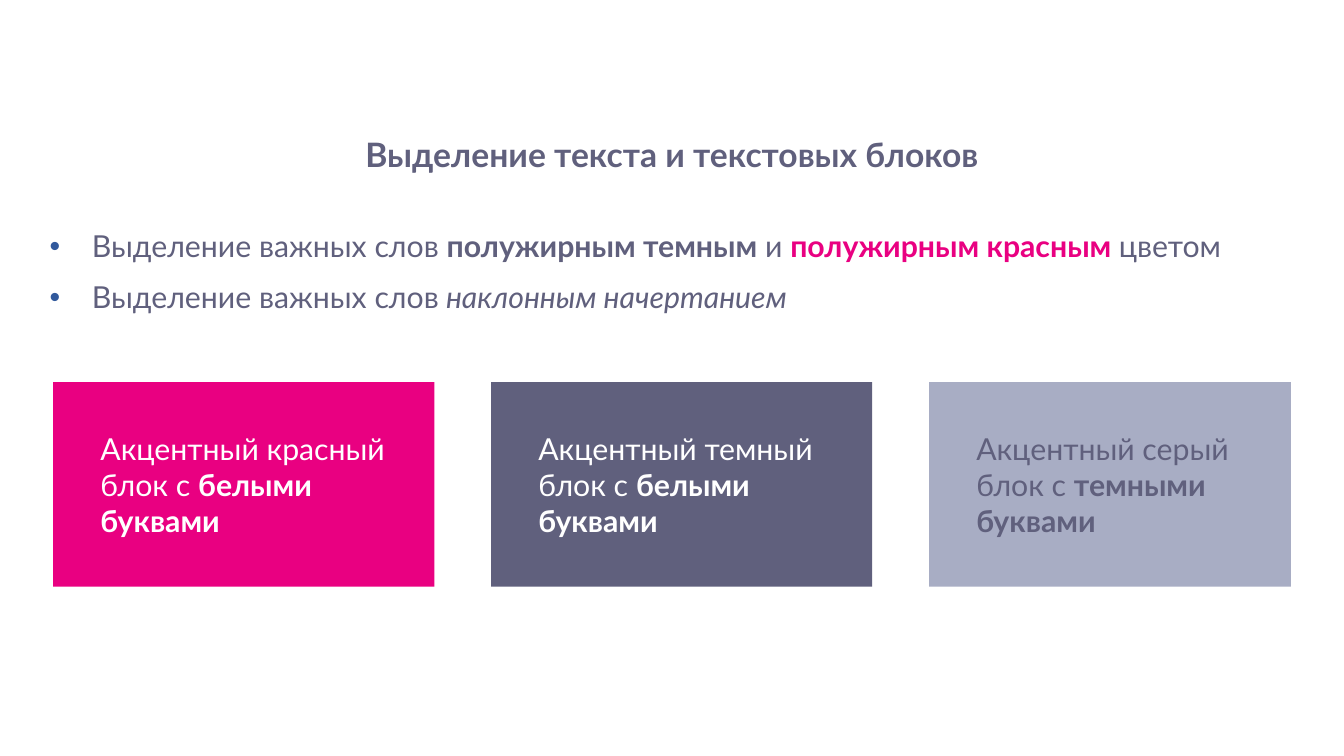
from lxml.etree import SubElement
from pptx import Presentation
from pptx.dml.color import RGBColor
from pptx.enum.shapes import MSO_SHAPE
from pptx.enum.text import MSO_ANCHOR, MSO_AUTO_SIZE, PP_ALIGN
from pptx.oxml.ns import qn
from pptx.util import Inches, Pt

DARK = RGBColor(0x60, 0x60, 0x7D)
RED = RGBColor(0xE9, 0x00, 0x81)
GREY = RGBColor(0xA8, 0xAD, 0xC4)
WHITE = RGBColor(0xFF, 0xFF, 0xFF)
BULLET_BLUE = RGBColor(0x31, 0x59, 0x9C)

TITLE = "Выделение текста и текстовых блоков"
BULLETS = [
    [("Выделение важных слов ", {}),
     ("полужирным темным", {"bold": True}),
     (" и ", {}),
     ("полужирным красным ", {"bold": True, "color": RED}),
     ("цветом", {})],
    [("Выделение важных слов", {}),
     (" наклонным начертанием", {"italic": True})],
]
# Plain words, bold words, width, fill, text colour
BLOCKS = [
    ("Акцентный красный блок с ", "белыми буквами", 3.15, RED, WHITE),
    ("Акцентный темный блок с ", "белыми буквами", 3.15, DARK, WHITE),
    ("Акцентный серый блок с ", "темными буквами", 2.99, GREY, DARK),
]
BLOCK_LEFT, BLOCK_STEP = 0.44, 3.62


def add_text(paragraph, text, *, size=18, color=DARK, bold=False, italic=False):
    run = paragraph.add_run()
    run.text = text
    font = run.font
    font.name = "Lato"
    font.size = Pt(size)
    font.bold = bold
    font.italic = italic
    font.color.rgb = color


def place(shape, left, top, width, height):
    shape.left, shape.top = Inches(left), Inches(top)
    shape.width, shape.height = Inches(width), Inches(height)


def set_frame(frame, anchor, inset_x, inset_y):
    frame.word_wrap = True
    frame.auto_size = MSO_AUTO_SIZE.NONE
    frame.vertical_anchor = anchor
    frame.margin_left = frame.margin_right = Inches(inset_x)
    frame.margin_top = frame.margin_bottom = Inches(inset_y)


def add_bullet(paragraph):
    properties = paragraph._p.get_or_add_pPr()
    properties.set("marL", str(Inches(0.35)))
    properties.set("indent", str(-Inches(0.35)))
    color = SubElement(properties, qn("a:buClr"))
    SubElement(color, qn("a:srgbClr"), val=str(BULLET_BLUE))
    SubElement(properties, qn("a:buFont"), typeface="Arial")
    SubElement(properties, qn("a:buChar"), char="•")


def fill_title(title):
    place(title, 0, 1, 11.11, 0.59)
    set_frame(title.text_frame, MSO_ANCHOR.MIDDLE, 0.05, 0.05)
    heading = title.text_frame.paragraphs[0]
    heading.alignment = PP_ALIGN.CENTER
    heading.line_spacing = 0.9
    add_text(heading, TITLE, size=20, bold=True)


def fill_list(body):
    place(body, 0.31, 1.86, 10.53, 0.87)
    frame = body.text_frame
    set_frame(frame, MSO_ANCHOR.TOP, 0.1, 0.05)
    for index, phrases in enumerate(BULLETS):
        item = frame.add_paragraph() if index else frame.paragraphs[0]
        add_bullet(item)
        item.line_spacing = 0.9
        item.space_before = Pt(11.1 if index else 0)
        for words, emphasis in phrases:
            add_text(item, words, **emphasis)


def add_block(slide, left, plain, strong, width, fill, color):
    block = slide.shapes.add_shape(
        MSO_SHAPE.RECTANGLE, Inches(left), Inches(3.16), Inches(width), Inches(1.69))
    block.shadow.inherit = False
    block.fill.solid()
    block.fill.fore_color.rgb = fill
    block.line.fill.background()
    set_frame(block.text_frame, MSO_ANCHOR.MIDDLE, 0.39, 0.39)
    label = block.text_frame.paragraphs[0]
    label.alignment = PP_ALIGN.LEFT
    add_text(label, plain, color=color)
    add_text(label, strong, color=color, bold=True)


def main():
    deck = Presentation()
    deck.slide_width, deck.slide_height = Inches(11.11), Inches(6.25)
    slide = deck.slides.add_slide(deck.slide_layouts[1])
    fill_title(slide.shapes.title)
    fill_list(slide.placeholders[1])
    for index, block in enumerate(BLOCKS):
        add_block(slide, BLOCK_LEFT + index * BLOCK_STEP, *block)
    deck.save("out.pptx")


if __name__ == "__main__":
    main()
